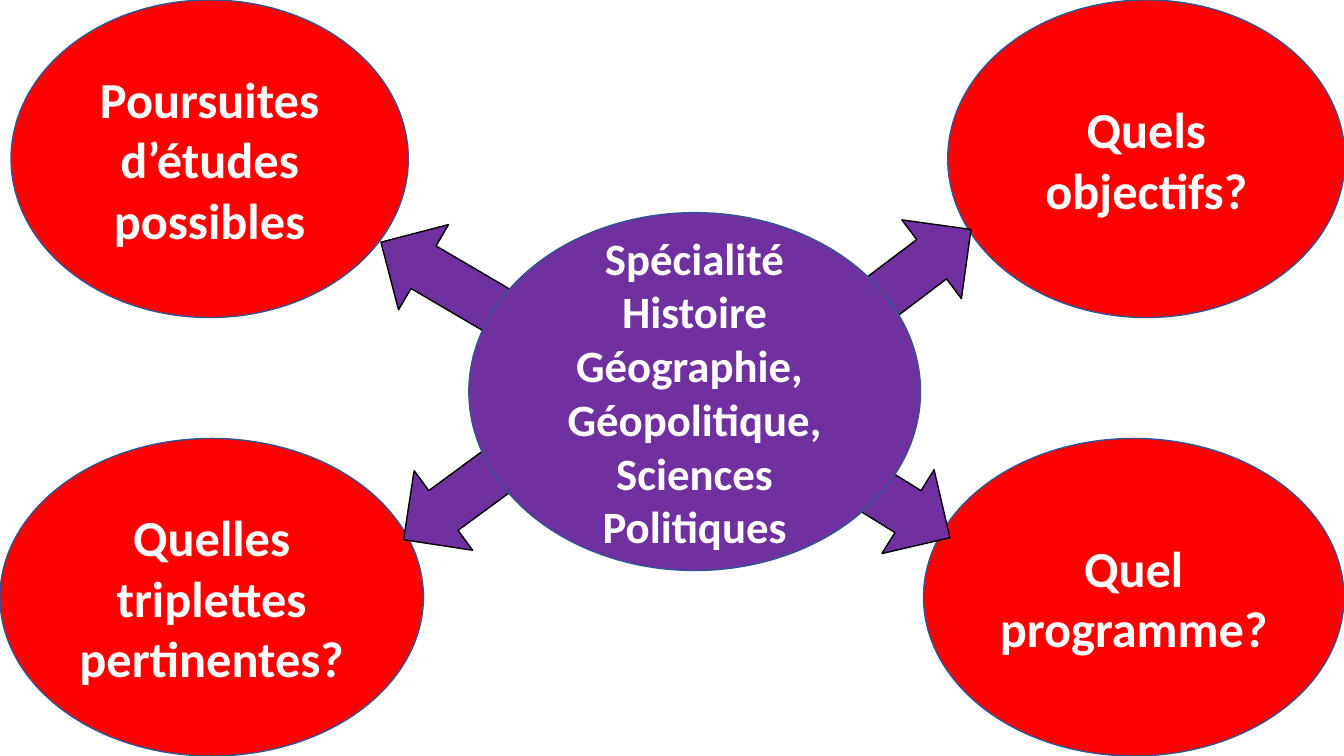
"""Slide: the speciality at the centre, with arrows to four surrounding questions."""
from pptx import Presentation
from pptx.dml.color import RGBColor
from pptx.enum.shapes import MSO_SHAPE as Preset
from pptx.enum.text import MSO_ANCHOR as Anchor, PP_ALIGN as Align
from pptx.util import Inches, Pt

RED = RGBColor(0xFF, 0x00, 0x00)
PURPLE = RGBColor(0x70, 0x30, 0xA0)
BLUE = RGBColor(0x32, 0x54, 0x91)
BLACK = RGBColor(0x00, 0x00, 0x00)
WHITE = RGBColor(0xFF, 0xFF, 0xFF)

deck = Presentation()
deck.slide_width, deck.slide_height = Inches(13.33), Inches(7.5)
slide = deck.slides.add_slide(deck.slide_layouts[6])


def add_filled(preset, left, top, width, height, fill, outline):
    shape = slide.shapes.add_shape(
        preset, Inches(left), Inches(top), Inches(width), Inches(height))
    shape.shadow.inherit = False
    shape.fill.solid()
    shape.fill.fore_color.rgb = fill
    shape.line.color.rgb = outline
    shape.line.width = Pt(1)
    return shape


def add_bubble(text, left, top, width, height, fill, size):
    bubble = add_filled(Preset.OVAL, left, top, width, height, fill, BLUE)
    frame = bubble.text_frame
    frame.word_wrap = True
    frame.vertical_anchor = Anchor.MIDDLE
    frame.text = text
    paragraph = frame.paragraphs[0]
    paragraph.alignment = Align.CENTER
    font = paragraph.font
    font.name, font.size, font.bold = "Calibri", Pt(size), True
    font.color.rgb = WHITE


QUESTION_HEIGHT = 3.15
LOWER_TOP = 7.5 - QUESTION_HEIGHT
questions = [
    ("Quels objectifs?", 9.4, 0, 3.94),
    ("Quel programme?", 9.16, LOWER_TOP, 4.17),
    ("Quelles triplettes pertinentes?", 0, LOWER_TOP, 4.2),
    ("Poursuites d’études possibles", 0.11, 0, 3.94),
]
arrows = [
    (8.22, 2.26, 322.9),
    (7.97, 4.43, 31.9),
    (3.85, 4.4, 143.7),
    (3.67, 2.31, 210.4),
]

for (question, left, top, width) in questions:
    add_bubble(question, left, top, width, QUESTION_HEIGHT, RED, 36)

for (left, top, angle) in arrows:
    arrow = add_filled(Preset.RIGHT_ARROW, left, top, 1.57, 0.98, PURPLE, BLACK)
    arrow.rotation = angle

add_bubble("Spécialité Histoire Géographie, \vGéopolitique, Sciences Politiques",
           4.65, 2.11, 4.48, 3.55, PURPLE, 32)

deck.save("out.pptx")
